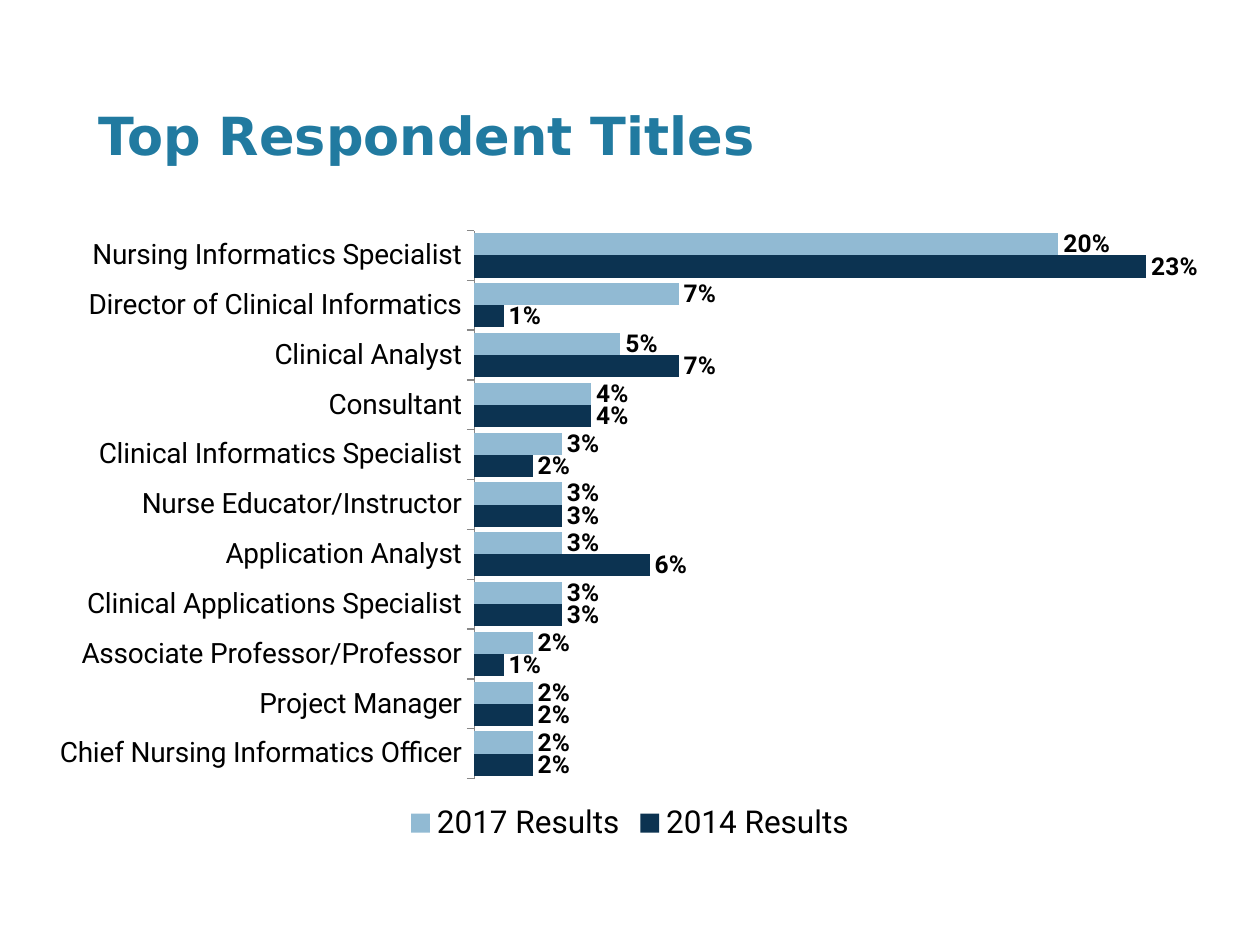
from pptx import Presentation
from pptx.chart.data import CategoryChartData
from pptx.dml.color import RGBColor
from pptx.enum import chart as ch, text
from pptx.oxml import parse_xml
from pptx.oxml.ns import nsdecls
from pptx.util import Inches, Pt

FONT = "Roboto"
# Title, 2014 share, 2017 share (percent), from the bottom up
TITLES = [
    ("Chief Nursing Informatics Officer", 2, 2),
    ("Project Manager", 2, 2),
    ("Associate Professor/Professor", 1, 2),
    ("Clinical Applications Specialist", 3, 3),
    ("Application Analyst", 6, 3),
    ("Nurse Educator/Instructor", 3, 3),
    ("Clinical Informatics Specialist", 2, 3),
    ("Consultant", 4, 4),
    ("Clinical Analyst", 7, 5),
    ("Director of Clinical Informatics", 1, 7),
    ("Nursing Informatics Specialist", 23, 20),
]
SERIES = [("2014 Results", "0C3351"), ("2017 Results", "91BAD3")]


def color(hex_value):
    return RGBColor.from_string(hex_value)


def set_font(font, size, hex_value="000000", bold=False, name=FONT):
    font.size, font.bold, font.name = Pt(size), bold, name
    font.color.rgb = color(hex_value)


def set_plot_box(chart, x, y, w, h):
    """Place the inner plot area, in fractions of the chart."""
    plot_area = chart._chartSpace.chart.plotArea
    for old in plot_area.xpath("c:layout"):
        plot_area.remove(old)
    plot_area.insert(0, parse_xml(
        f'<c:layout {nsdecls("c")}><c:manualLayout><c:layoutTarget val="inner"/>'
        '<c:xMode val="edge"/><c:yMode val="edge"/>'
        f'<c:x val="{x}"/><c:y val="{y}"/><c:w val="{w}"/><c:h val="{h}"/>'
        '</c:manualLayout></c:layout>'))


def add_title(s, x, y, w, h):
    tf = s.shapes.add_textbox(x, y, w, h).text_frame
    tf.word_wrap = True
    tf.margin_left = 0
    tf.vertical_anchor = text.MSO_ANCHOR.MIDDLE
    tf.text = "Top Respondent Titles"
    set_font(tf.paragraphs[0].runs[0].font, 30, "217AA0", True, "DejaVu Sans")


def add_results_chart(s, x, y, w, h):
    data = CategoryChartData(number_format="0%")
    data.categories = [row[0] for row in TITLES]
    for i, (name, _) in enumerate(SERIES, start=1):
        data.add_series(name, [row[i] / 100 for row in TITLES])
    chart = s.shapes.add_chart(
        ch.XL_CHART_TYPE.BAR_CLUSTERED, x, y, w, h, data).chart
    set_font(chart.font, 18)
    chart.has_title = False

    # Axes
    axis = chart.category_axis
    set_font(axis.tick_labels.font, 16)
    axis.major_tick_mark = ch.XL_TICK_MARK.OUTSIDE
    axis.format.line.color.rgb = color("888888")
    axis.format.line.width = Pt(0.75)
    values = chart.value_axis
    values.minimum_scale, values.maximum_scale = 0, 0.25
    values.has_major_gridlines = False
    values.tick_labels.number_format = "0%"
    values.tick_labels.number_format_is_linked = False
    values.visible = False

    # Bars and value labels
    plot = chart.plots[0]
    plot.gap_width, plot.overlap = 25, 0
    plot.vary_by_categories = False
    for series, (_, fill) in zip(plot.series, SERIES):
        series.format.fill.solid()
        series.format.fill.fore_color.rgb = color(fill)
        labels = series.data_labels
        labels.show_value = True
        labels.number_format = "0%"
        labels.number_format_is_linked = False
        labels.position = ch.XL_LABEL_POSITION.OUTSIDE_END
        set_font(labels.font, 14, bold=True)

    # Legend
    chart.has_legend = True
    chart.legend.position = ch.XL_LEGEND_POSITION.BOTTOM
    chart.legend.include_in_layout = False
    set_font(chart.legend.font, 18)
    set_plot_box(chart, 0.37, 0.02, 0.61, 0.87)


def main():
    prs = Presentation()
    prs.slide_width, prs.slide_height = Inches(10), Inches(7.5)
    s = prs.slides.add_slide(prs.slide_layouts[6])
    add_title(s, Inches(0.78), Inches(0.63), Inches(9.07), Inches(0.88))
    add_results_chart(s, Inches(0.25), Inches(1.73), Inches(9.5), Inches(5))
    prs.save("out.pptx")


if __name__ == "__main__":
    main()
